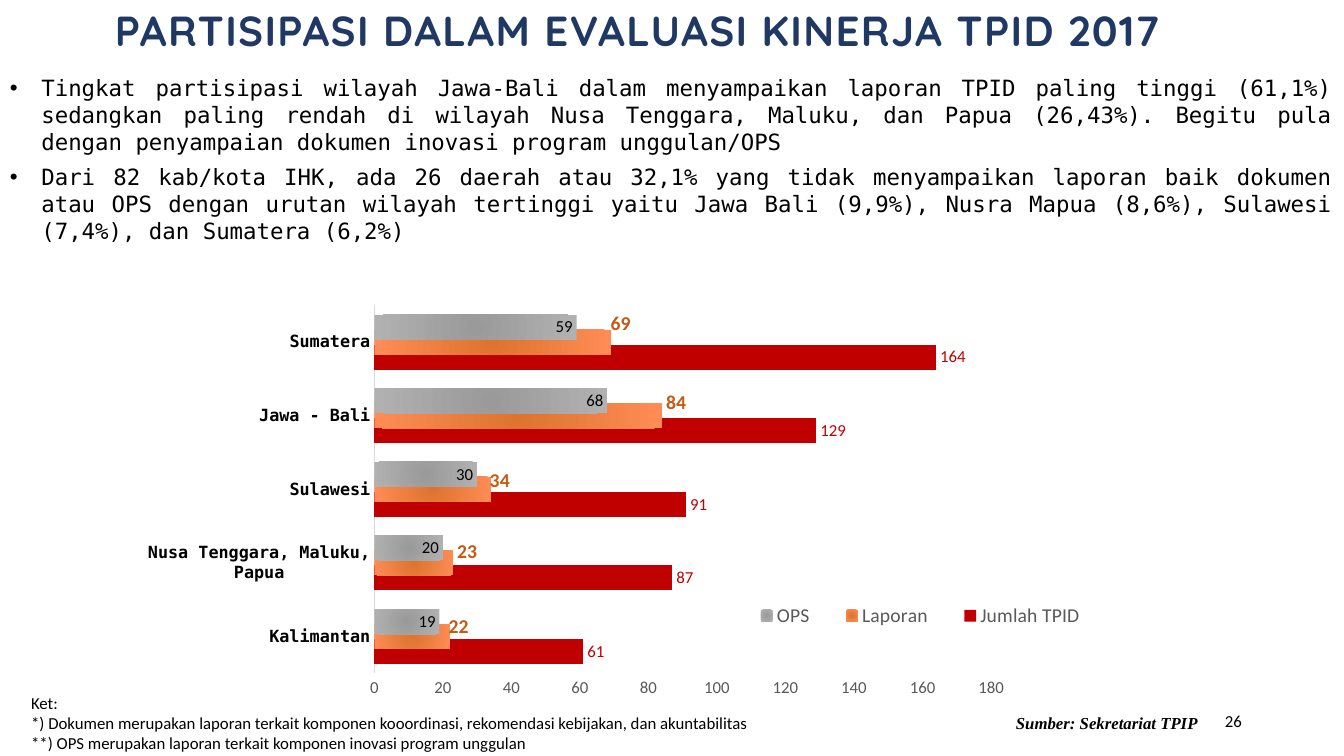
from dataclasses import dataclass

from lxml import etree
from pptx import Presentation
from pptx import util as u
from pptx.chart.data import CategoryChartData
from pptx.dml.color import RGBColor
from pptx.enum import chart as ch
from pptx.enum import text
from pptx.oxml import parse_xml
from pptx.oxml.ns import nsdecls, qn

COLOURS = {
    "black": "000000", "navy": "203864", "red": "C00000", "rust": "C55A11",
    "grey": "595959", "rule": "D9D9D9", "orange core": "DD742E",
    "orange rim": "FF8C55", "silver core": "9A9A9A", "silver rim": "B1B1B1",
}
REGIONS = ["Kalimantan", "Nusa Tenggara, Maluku, Papua", "Sulawesi", "Jawa - Bali", "Sumatera"]
LAPORAN_SHIFTS = [(-0.005, -0.024), (0, -0.026), (-0.005, -0.02), (0, -0.03), (-0.004, -0.043)]


@dataclass(frozen=True)
class Style:
    size: float
    name: str = "Calibri"
    colour: str = "black"
    bold: bool = False
    italic: bool = False


@dataclass(frozen=True)
class TextItem:
    frame: tuple[float, float, float, float]
    lines: tuple[str, ...]
    style: Style
    align: text.PP_ALIGN = text.PP_ALIGN.LEFT
    anchor: text.MSO_ANCHOR = text.MSO_ANCHOR.TOP
    bullet: bool = False


@dataclass(frozen=True)
class BarSeries:
    name: str
    values: tuple[int, ...]
    fill: tuple[str, ...]
    label: Style
    position: ch.XL_LABEL_POSITION = ch.XL_LABEL_POSITION.OUTSIDE_END


TITLE = TextItem((74.88, -4.32, 926.64, 57.6), ("PARTISIPASI DALAM EVALUASI KINERJA TPID 2017",),
                 Style(30, "Quicksand", "navy", True), anchor=text.MSO_ANCHOR.MIDDLE)
TEXTS = [
    TextItem((678.24, 500.4, 216, 28.8), ("26",), Style(12),
             text.PP_ALIGN.RIGHT, text.MSO_ANCHOR.MIDDLE),
    TextItem((0, 49.68, 958.32, 110.16), (
        "Tingkat partisipasi wilayah Jawa-Bali dalam menyampaikan laporan TPID paling tinggi (61,1%) "
        "sedangkan paling rendah di wilayah Nusa Tenggara, Maluku, dan Papua (26,43%). Begitu pula "
        "dengan penyampaian dokumen inovasi program unggulan/OPS",
        "Dari 82 kab/kota IHK, ada 26 daerah atau 32,1% yang tidak menyampaikan laporan baik dokumen "
        "atau OPS dengan urutan wilayah tertinggi yaitu Jawa Bali (9,9%), Nusra Mapua (8,6%), "
        "Sulawesi (7,4%), dan Sumatera (6,2%)",
    ), Style(16, "DejaVu Sans Mono"), text.PP_ALIGN.JUSTIFY, bullet=True),
    TextItem((15.12, 491.04, 718.56, 51.12), (
        "Ket:",
        "*) Dokumen merupakan laporan terkait komponen kooordinasi, rekomendasi kebijakan, dan akuntabilitas",
        "**) OPS merupakan laporan terkait komponen inovasi program unggulan",
    ), Style(12)),
    TextItem((718.56, 505.44, 154.8, 21.6), ("Sumber: Sekretariat TPIP",),
             Style(12, "Times New Roman", bold=True, italic=True)),
]
SERIES = [
    BarSeries("Jumlah TPID", (61, 87, 91, 129, 164), ("red",), Style(12, colour="red")),
    BarSeries("Laporan ", (22, 23, 34, 84, 69), ("orange core", "orange rim"),
              Style(14, colour="rust", bold=True)),
    BarSeries("OPS ", (19, 20, 30, 68, 59), ("silver core", "silver rim"), Style(12),
              ch.XL_LABEL_POSITION.INSIDE_END),
]


def rgb(name: str) -> RGBColor:
    """Return a named colour."""
    return RGBColor.from_string(COLOURS[name])


def style_font(font, style: Style) -> None:
    """Apply a style to a font."""
    font.size, font.name = u.Pt(style.size), style.name
    font.bold, font.italic = style.bold, style.italic
    font.color.rgb = rgb(style.colour)


def fill_box(box, item: TextItem) -> None:
    """Write the item's lines into a box and format them."""
    box.left, box.top, box.width, box.height = map(u.Pt, item.frame)
    frame = box.text_frame
    frame.text = "\n".join(item.lines)
    frame.word_wrap, frame.auto_size = True, text.MSO_AUTO_SIZE.NONE
    frame.vertical_anchor = item.anchor
    for index, para in enumerate(frame.paragraphs):
        para.alignment = item.align
        if item.bullet:
            props = para._p.get_or_add_pPr()
            props.set("marL", str(u.Pt(22.5)))
            props.set("indent", str(u.Pt(-22.5)))
            etree.SubElement(props, qn("a:buFont"), typeface="Arial")
            etree.SubElement(props, qn("a:buChar"), char="•")
            if index:
                para.space_before = u.Pt(6)
        for span in para.runs:
            style_font(span.font, item.style)


def place(parent, index: int, **parts: object) -> None:
    """Give a chart element a manual layout."""
    for old in parent.findall(qn("c:layout")):
        parent.remove(old)
    layout = etree.Element(qn("c:layout"))
    manual = etree.SubElement(layout, qn("c:manualLayout"))
    for tag, value in parts.items():
        etree.SubElement(manual, qn(f"c:{tag}"), val=str(value))
    parent.insert(index, layout)


def paint_radial(series, core: str, rim: str) -> None:
    """Fill a series with a radial gradient."""
    props = series.format.fill._xPr
    props.insert(0, parse_xml(
        f'<a:gradFill {nsdecls("a")} rotWithShape="1"><a:gsLst>'
        f'<a:gs pos="0"><a:srgbClr val="{COLOURS[core]}"/></a:gs>'
        f'<a:gs pos="100000"><a:srgbClr val="{COLOURS[rim]}"/></a:gs></a:gsLst>'
        '<a:path path="circle"><a:fillToRect l="100000" t="100000" r="100000" b="100000"/></a:path>'
        '</a:gradFill>'))


def style_series(series, item: BarSeries) -> None:
    """Colour a series and its value labels."""
    series.invert_if_negative = False
    if len(item.fill) == 1:
        series.format.fill.solid()
        series.format.fill.fore_color.rgb = rgb(item.fill[0])
    else:
        paint_radial(series, *item.fill)
    labels = series.data_labels
    labels.show_value, labels.position = True, item.position
    style_font(labels.font, item.label)


def shift_labels(series, item: BarSeries, shifts: list[tuple[float, float]]) -> None:
    """Move each point label by a fraction of the chart size."""
    for index in range(len(shifts)):
        label = series.points[index].data_label
        label.position = item.position
        style_font(label.font, item.label)
    for element, (x, y) in zip(series._element.iter(qn("c:dLbl")), shifts):
        place(element, 1, x=x, y=y)


def add_participation_chart(page) -> None:
    """Draw the participation bars by region."""
    data = CategoryChartData()
    data.categories = REGIONS
    for item in SERIES:
        data.add_series(item.name, item.values)
    chart = page.shapes.add_chart(ch.XL_CHART_TYPE.BAR_CLUSTERED,
                                  *map(u.Pt, (85.68, 203.76, 732.96, 298.8)), data).chart
    style_font(chart.font, Style(10))
    chart.has_title = False
    plot = chart.plots[0]
    plot.gap_width, plot.overlap, plot.vary_by_categories = 75, 40, False
    for series, item in zip(plot.series, SERIES):
        style_series(series, item)
    shift_labels(plot.series[1], SERIES[1], LAPORAN_SHIFTS)

    regions, counts = chart.category_axis, chart.value_axis
    for axis in (regions, counts):
        axis.major_tick_mark = axis.minor_tick_mark = ch.XL_TICK_MARK.NONE
        axis.has_major_gridlines = False
    style_font(regions.tick_labels.font, Style(12, "DejaVu Sans Mono", bold=True))
    regions.format.line.color.rgb = rgb("rule")
    regions.format.line.width = u.Pt(1)
    style_font(counts.tick_labels.font, Style(12, colour="grey"))
    counts.format.line.fill.background()
    counts.minimum_scale, counts.maximum_scale, counts.major_unit = 0, 180, 20

    chart.has_legend = True
    chart.legend.position = ch.XL_LEGEND_POSITION.RIGHT
    chart.legend.include_in_layout = False
    style_font(chart.legend.font, Style(14, colour="grey"))
    place(chart.legend._element, 1, xMode="edge", yMode="edge", x=0.6, y=0.75, w=0.36, h=0.08)
    place(plot._element.getparent(), 0, layoutTarget="inner", xMode="edge", yMode="edge",
          x=0.248, y=0.048, w=0.601, h=0.88)


def main() -> None:
    """Build the slide and save it."""
    deck = Presentation()
    deck.slide_width, deck.slide_height = u.Pt(960), u.Pt(540)
    page = deck.slides.add_slide(deck.slide_layouts[5])
    title = page.shapes.title
    fill_box(title, TITLE)
    heading = title.text_frame.paragraphs[0]
    heading.line_spacing = 0.8
    heading.runs[0].font._element.set("spc", "100")
    add_participation_chart(page)
    for item in TEXTS:
        fill_box(page.shapes.add_textbox(*map(u.Pt, item.frame)), item)
    deck.save("out.pptx")


if __name__ == "__main__":
    main()
